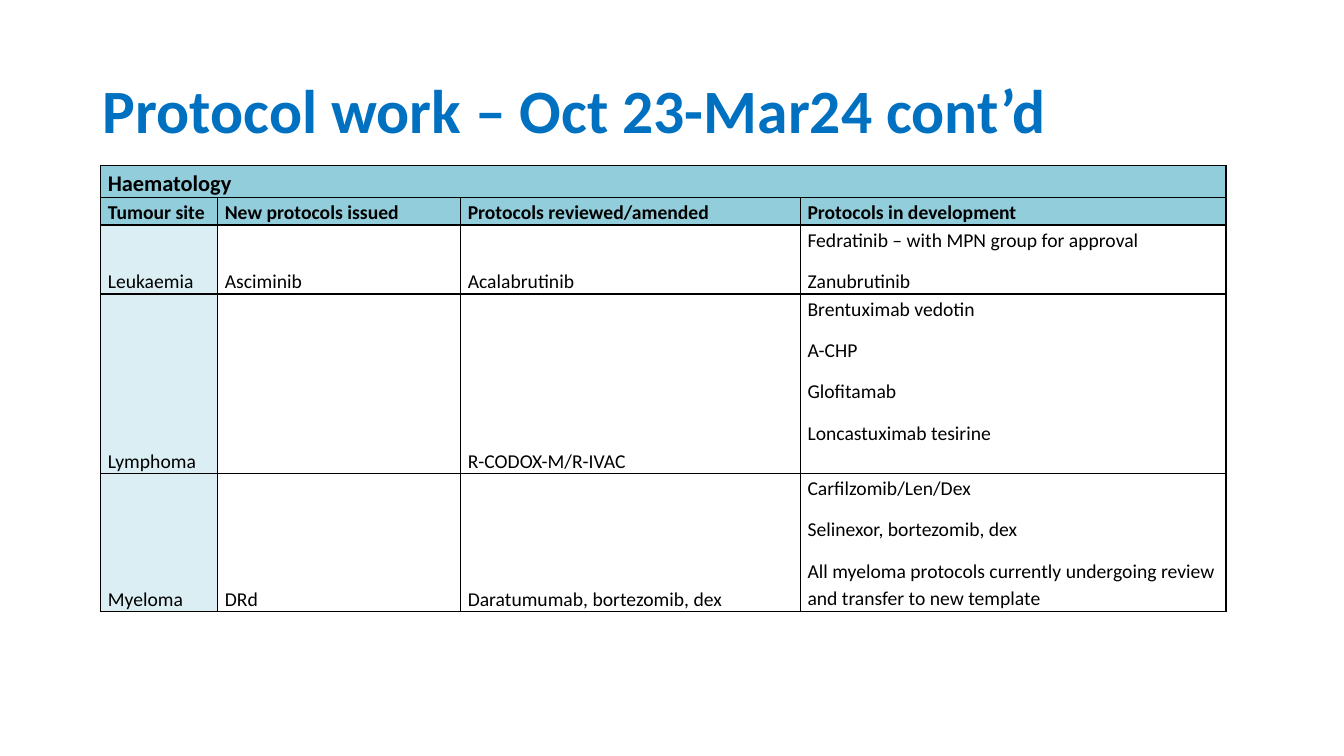
from lxml import etree
from pptx import Presentation
from pptx import util as u
from pptx.dml.color import RGBColor
from pptx.enum import text
from pptx.oxml import ns

COLORS = {"title": "0070C0", "header": "92CDDC", "site": "DAEEF3", "ink": "000000"}


def write(tf, lines, size, bold, color, para_format):
    for i, line in enumerate(lines):
        p = tf.paragraphs[0] if i == 0 else tf.add_paragraph()
        for name, value in para_format.items():
            setattr(p, name, value)
        r = p.add_run()
        r.text = line
        for name, value in {"name": "Calibri", "size": u.Pt(size), "bold": bold}.items():
            setattr(r.font, name, value)
        r.font.color.rgb = RGBColor.from_string(COLORS[color])


def add_borders(cell):
    tc_pr = cell._tc.get_or_add_tcPr()
    for side in ("lnL", "lnR", "lnT", "lnB"):
        ln = etree.SubElement(tc_pr, ns.qn(f"a:{side}"), w=str(u.Pt(1)))
        fill = etree.SubElement(ln, ns.qn("a:solidFill"))
        etree.SubElement(fill, ns.qn("a:srgbClr"), val=COLORS["ink"])


prs = Presentation()
prs.slide_width, prs.slide_height = u.Inches(13.33), u.Inches(7.5)
s = prs.slides.add_slide(prs.slide_layouts[5])

# Title
title = s.shapes.title
box = {"left": 0.92, "top": 0.4, "width": 11.5, "height": 1.45}
for name, value in box.items():
    setattr(title, name, u.Inches(value))
title.text_frame.vertical_anchor = text.MSO_ANCHOR.MIDDLE
write(title.text_frame, ["Protocol work – Oct 23-Mar24 cont’d"], 44, True, "title",
      {"alignment": text.PP_ALIGN.LEFT, "line_spacing": 0.9})

# Table content: each cell is a list of paragraphs
rows = [
    [["Haematology"], [], [], []],
    [["Tumour site"], ["New protocols issued"], ["Protocols reviewed/amended"],
     ["Protocols in development"]],
    [["Leukaemia"], ["Asciminib"], ["Acalabrutinib"],
     ["Fedratinib – with MPN group for approval", "Zanubrutinib"]],
    [["Lymphoma"], [], ["R-CODOX-M/R-IVAC"],
     ["Brentuximab vedotin", "A-CHP", "Glofitamab", "Loncastuximab tesirine"]],
    [["Myeloma"], ["DRd"], ["Daratumumab, bortezomib, dex"],
     ["Carfilzomib/Len/Dex", "Selinexor, bortezomib, dex",
      "All myeloma protocols currently undergoing review and transfer to new template"]],
]
col_widths = [1.16, 2.41, 3.37, 4.22]
row_heights = [0.32, 0.27, 0.68, 1.78, 1.37]

# Table frame
frame = s.shapes.add_table(len(rows), len(col_widths), u.Inches(1), u.Inches(1.64),
                           u.Inches(sum(col_widths)), u.Inches(sum(row_heights)))
table = frame.table
table.first_row = table.horz_banding = False
for column, width in zip(table.columns, col_widths):
    column.width = u.Inches(width)
for row, height in zip(table.rows, row_heights):
    row.height = u.Inches(height)
table.cell(0, 0).merge(table.cell(0, 3))

# Table cells
cell_format = {"margin_left": u.Inches(0.07), "margin_right": u.Inches(0.07),
               "margin_top": 0, "margin_bottom": 0}
para_format = {"line_spacing": 1.15, "space_after": u.Pt(10)}
for i, row in enumerate(rows):
    is_header = i < 2
    for j, lines in enumerate(row):
        cell = table.cell(i, j)
        for name, value in cell_format.items():
            setattr(cell, name, value)
        in_development = j == 3 and not is_header
        cell.vertical_anchor = text.MSO_ANCHOR.TOP if in_development else text.MSO_ANCHOR.BOTTOM
        add_borders(cell)
        if is_header or j == 0:
            cell.fill.solid()
            cell.fill.fore_color.rgb = RGBColor.from_string(
                COLORS["header" if is_header else "site"])
        else:
            cell.fill.background()
        write(cell.text_frame, lines, 16 if i == 0 else 14, is_header, "ink", para_format)

prs.save("out.pptx")
